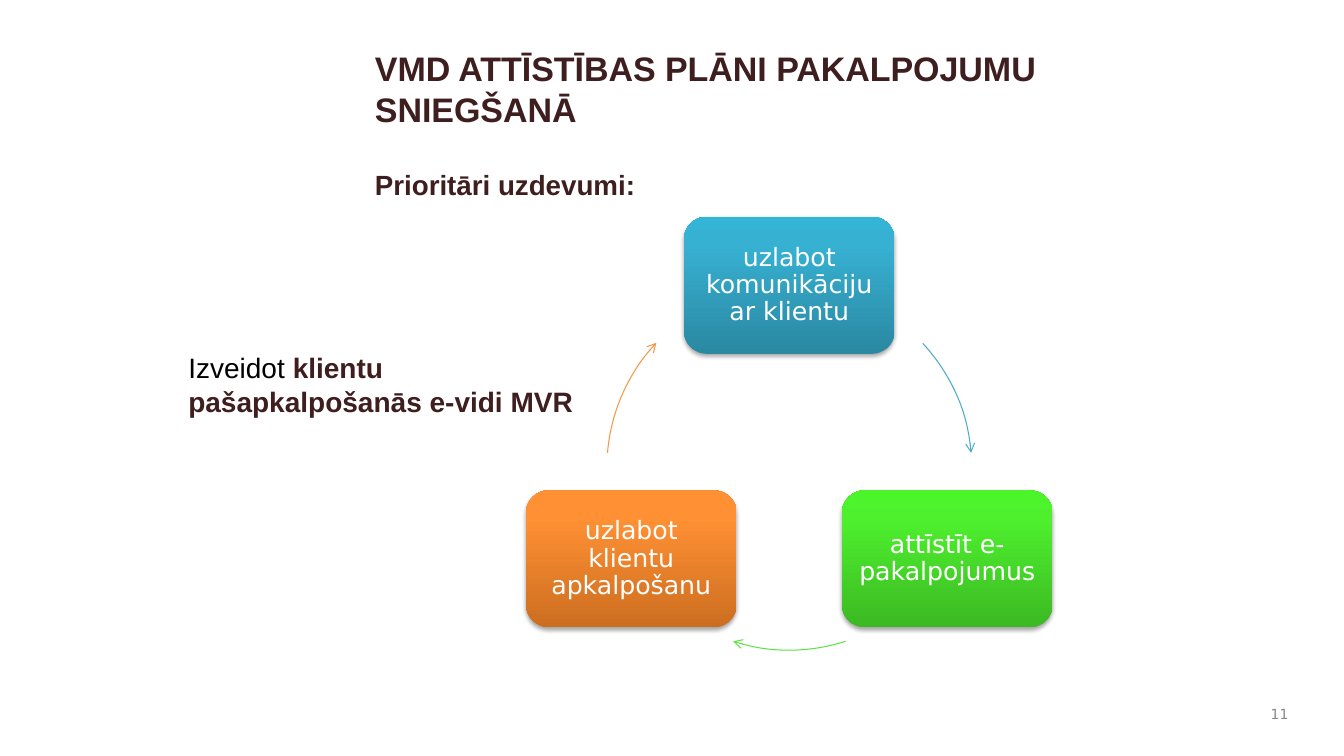
import copy
import math

import lxml.etree
import pptx
import pptx.dml.color
import pptx.enum.shapes
import pptx.enum.text
import pptx.oxml.ns
import pptx.util

Pt = pptx.util.Pt
qn = pptx.oxml.ns.qn
ALIGN = pptx.enum.text.PP_ALIGN
ANCHOR = pptx.enum.text.MSO_ANCHOR
SHAPE = pptx.enum.shapes.MSO_SHAPE

BROWN = "3E1E1F"
CYCLE_CENTER = (563.8, 334.1)
CYCLE_RADIUS = 130.3
BOX_SIZE = (150.5, 97.9)
TASKS = [
    ("uzlabot komunikāciju ar klientu", -90, ("2A88A2", "37B1D2", "34B4D6")),
    ("attīstīt e-pakalpojumus", 30, ("3CB923", "4EF02E", "4CF52A")),
    ("uzlabot klientu apkalpošanu", 150, ("CC6E20", "FF9034", "FF9136")),
]
ARROWS = [(317, 355.3, "4BACC6"), (72, 107.9, "60E146"), (184.7, 223.2, "F79646")]


def rgb(color):
    return pptx.dml.color.RGBColor.from_string(color)


def add_text(p, text, size=20, color="000000", bold=False, font="Arial"):
    r = p.add_run()
    r.text = text
    r.font.name = font
    r.font.size = Pt(size)
    r.font.bold = bold
    r.font.color.rgb = rgb(color)


class Deck:
    """Holds the presentation style and the slide being built."""

    label_font = "DejaVu Sans"
    line_width = 0.75

    def __init__(self, width, height):
        self.prs = pptx.Presentation()
        self.prs.slide_width, self.prs.slide_height = Pt(width), Pt(height)
        self.s = self.prs.slides.add_slide(self.prs.slide_layouts[5])

    def title(self, x, y, w, h, heading, subheading):
        sp = self.s.shapes.title
        sp.left, sp.top, sp.width, sp.height = Pt(x), Pt(y), Pt(w), Pt(h)
        tf = sp.text_frame
        tf.word_wrap = True
        tf.auto_size = pptx.enum.text.MSO_AUTO_SIZE.NONE
        tf.vertical_anchor = ANCHOR.TOP
        p = tf.paragraphs[0]
        for i, line in enumerate(heading):
            if i:
                p.add_line_break()
            add_text(p, line, size=24.3, color=BROWN, bold=True)
        sub = tf.add_paragraph()
        sub.space_before = Pt(28)
        add_text(sub, subheading, size=19.8, color=BROWN, bold=True)
        for p in tf.paragraphs:
            p.alignment = ALIGN.LEFT

    def text(self, x, y, w, h, runs, align=ALIGN.LEFT, anchor=ANCHOR.TOP):
        tf = self.s.shapes.add_textbox(Pt(x), Pt(y), Pt(w), Pt(h)).text_frame
        tf.word_wrap = True
        tf.vertical_anchor = anchor
        p = tf.paragraphs[0]
        p.alignment = align
        for text, style in runs:
            add_text(p, text, **style)

    def box(self, cx, cy, w, h, text, colors):
        sp = self.s.shapes.add_shape(
            SHAPE.ROUNDED_RECTANGLE, Pt(cx - w / 2), Pt(cy - h / 2), Pt(w), Pt(h))
        sp.line.fill.background()
        self.gradient(sp, colors)
        self.shadow(sp)
        tf = sp.text_frame
        tf.word_wrap = True
        tf.vertical_anchor = ANCHOR.MIDDLE
        tf.margin_left = tf.margin_right = tf.margin_top = tf.margin_bottom = Pt(5)
        p = tf.paragraphs[0]
        p.alignment = ALIGN.CENTER
        p.line_spacing = 0.9
        add_text(p, text, size=18, color="FFFFFF", font=self.label_font)

    def gradient(self, sp, colors):
        sp.fill.gradient()
        sp.fill.gradient_angle = 90
        stops = sp._element.spPr.find(qn("a:gradFill")).find(qn("a:gsLst"))
        stops.append(copy.deepcopy(stops[-1]))
        for stop, position, color in zip(sp.fill.gradient_stops, (0, 0.8, 1), colors):
            stop.position = position
            stop.color.rgb = rgb(color)

    def shadow(self, sp):
        sp.shadow.inherit = False
        effects = sp._element.spPr.find(qn("a:effectLst"))
        outer = lxml.etree.SubElement(
            effects, qn("a:outerShdw"), blurRad=str(Pt(3.1)), dist=str(Pt(1.8)),
            dir="5400000", rotWithShape="0")
        color = lxml.etree.SubElement(outer, qn("a:srgbClr"), val="000000")
        lxml.etree.SubElement(color, qn("a:alpha"), val="35000")

    def arc_arrow(self, cx, cy, radius, start, end, color):
        sp = self.s.shapes.add_shape(
            SHAPE.ARC, Pt(cx - radius), Pt(cy - radius), Pt(2 * radius), Pt(2 * radius))
        sp.adjustments[0], sp.adjustments[1] = start * 0.6, end * 0.6
        sp.shadow.inherit = False
        sp.fill.background()
        sp.line.color.rgb = rgb(color)
        sp.line.width = Pt(self.line_width)
        ln = sp._element.spPr.find(qn("a:ln"))
        lxml.etree.SubElement(ln, qn("a:tailEnd"), type="arrow")


def main():
    deck = Deck(960, 540)
    deck.title(260.6, 30.2, 591, 68.4,
               ("VMD ATTĪSTĪBAS PLĀNI PAKALPOJUMU", "SNIEGŠANĀ"),
               "Prioritāri uzdevumi:")
    deck.text(895.7, 498.2, 31.7, 23.8,
              [("11", dict(size=10, color="898989", font=deck.label_font))],
              align=ALIGN.RIGHT, anchor=ANCHOR.MIDDLE)
    cx, cy = CYCLE_CENTER
    for (text, degrees, colors), arrow in zip(TASKS, ARROWS):
        angle = math.radians(degrees)
        deck.box(cx + CYCLE_RADIUS * math.cos(angle), cy + CYCLE_RADIUS * math.sin(angle),
                 *BOX_SIZE, text, colors)
        deck.arc_arrow(cx, cy, CYCLE_RADIUS, *arrow)
    deck.text(127.4, 247, 310.3, 55.4,
              [("Izveidot ", {}),
               ("klientu pašapkalpošanās e-vidi MVR", dict(color=BROWN, bold=True))])
    deck.prs.save("out.pptx")


if __name__ == "__main__":
    main()
